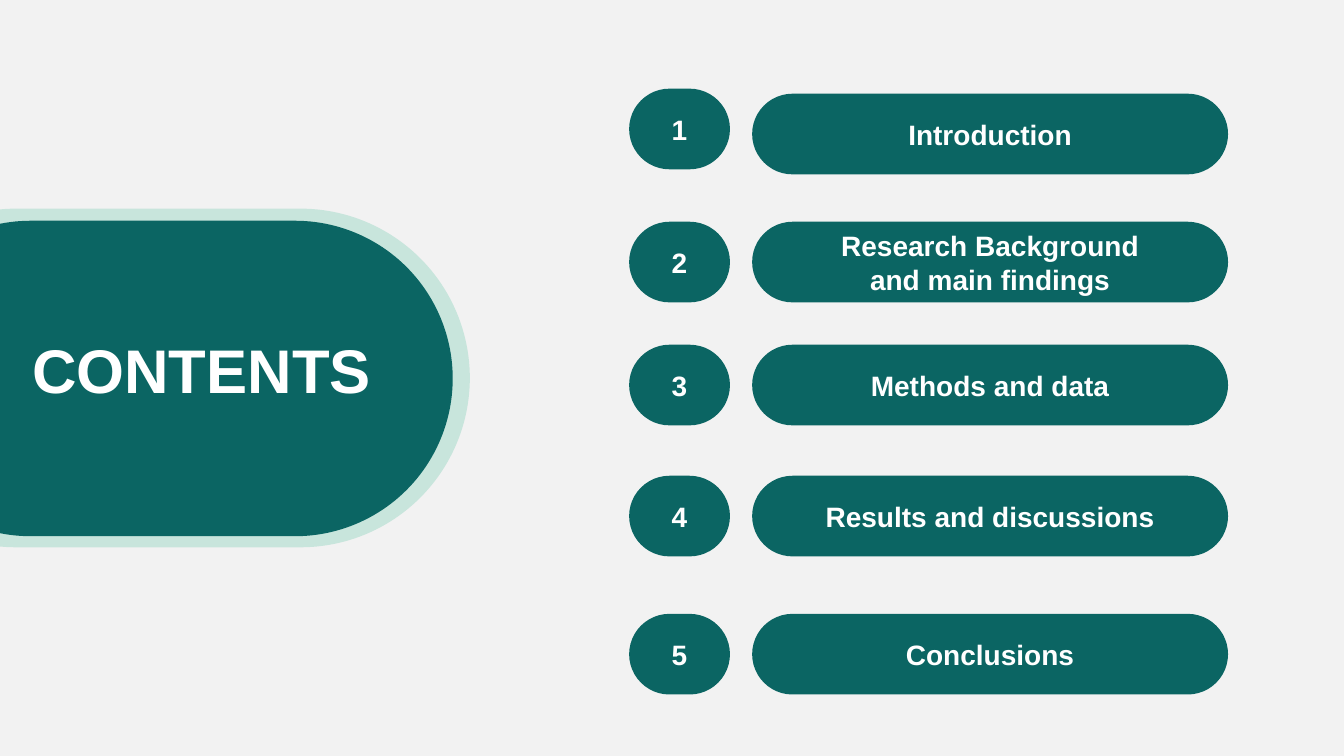
from dataclasses import dataclass

from pptx import Presentation
from pptx import util as u
from pptx.dml.color import RGBColor
from pptx.enum import shapes, text


@dataclass(frozen=True)
class Theme:
    background: RGBColor = RGBColor.from_string("F2F2F2")
    teal: RGBColor = RGBColor.from_string("0B6563")
    mint: RGBColor = RGBColor.from_string("C8E5DC")
    white: RGBColor = RGBColor.from_string("FFFFFF")
    font: str = "Arial"
    title_size: int = 44
    item_size: int = 20


THEME = Theme()

ITEM_HEIGHT = 0.8
NUMBER_LEFT, NUMBER_WIDTH = 6.24, 1
LABEL_LEFT, LABEL_WIDTH = 7.46, 4.72

# Number top, label top, label
ITEMS = [
    (0.88, 0.93, "Introduction"),
    (2.2, 2.2, "Research Background\nand main findings"),
    (3.42, 3.42, "Methods and data"),
    (4.72, 4.72, "Results and discussions"),
    (6.09, 6.09, "Conclusions"),
]


def write_text(shape, words, size, anchor):
    frame = shape.text_frame
    frame.word_wrap = True
    frame.auto_size = text.MSO_AUTO_SIZE.NONE
    frame.vertical_anchor = anchor
    paragraph = frame.paragraphs[0]
    paragraph.text = words
    paragraph.alignment = text.PP_ALIGN.CENTER
    font = paragraph.font
    font.name = THEME.font
    font.size = u.Pt(size)
    font.bold = True
    font.color.rgb = THEME.white


def add_pill(slide, left, top, width, height, fill, words=None):
    pill = slide.shapes.add_shape(
        shapes.MSO_SHAPE.ROUNDED_RECTANGLE,
        u.Inches(left), u.Inches(top), u.Inches(width), u.Inches(height))
    pill.adjustments[0] = 0.5
    pill.shadow.inherit = False
    pill.fill.solid()
    pill.fill.fore_color.rgb = fill
    pill.line.fill.background()
    if words:
        write_text(pill, words, THEME.item_size, text.MSO_ANCHOR.MIDDLE)


def place_title(slide, words, left, top, width, height):
    title = slide.shapes.title
    title.left, title.top = u.Inches(left), u.Inches(top)
    title.width, title.height = u.Inches(width), u.Inches(height)
    write_text(title, words, THEME.title_size, text.MSO_ANCHOR.TOP)
    # Bring the title in front of the pills
    title.element.getparent().append(title.element)


def main():
    presentation = Presentation()
    presentation.slide_width = u.Inches(13.33)
    presentation.slide_height = u.Inches(7.5)
    slide = presentation.slides.add_slide(presentation.slide_layouts[5])
    slide.background.fill.solid()
    slide.background.fill.fore_color.rgb = THEME.background

    # Title panel running off the left edge
    add_pill(slide, -1.52, 2.07, 6.18, 3.36, THEME.mint)
    add_pill(slide, -1.26, 2.19, 5.75, 3.13, THEME.teal)
    place_title(slide, "CONTENTS", 0, 3.24, 4, 0.84)

    # Numbered list of contents
    for number, (number_top, label_top, label) in enumerate(ITEMS, start=1):
        add_pill(slide, NUMBER_LEFT, number_top, NUMBER_WIDTH, ITEM_HEIGHT,
                 THEME.teal, str(number))
        add_pill(slide, LABEL_LEFT, label_top, LABEL_WIDTH, ITEM_HEIGHT,
                 THEME.teal, label)

    presentation.save("out.pptx")


if __name__ == "__main__":
    main()
